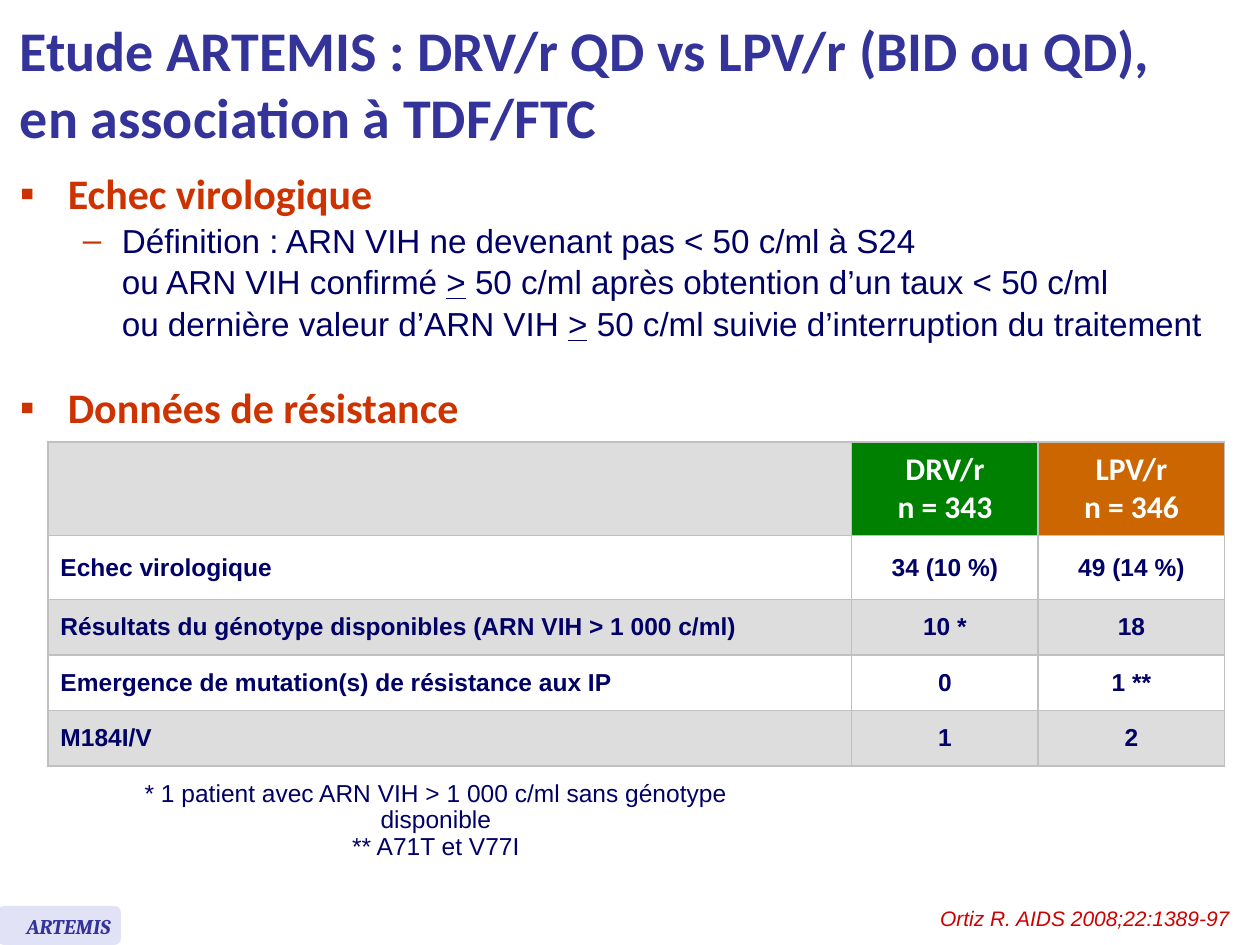
from lxml.etree import SubElement
from pptx import Presentation
from pptx.dml.color import RGBColor
from pptx.enum.shapes import MSO_SHAPE as Shape
from pptx.enum.text import MSO_ANCHOR as Anchor, PP_ALIGN as Align
from pptx.oxml.ns import qn
from pptx.util import Inches, Pt

INDIGO = RGBColor(0x33, 0x33, 0x99)
NAVY = RGBColor(0x00, 0x00, 0x66)
RUST = RGBColor(0xCC, 0x33, 0x00)
RED = RGBColor(0xCC, 0x00, 0x00)
GREEN = RGBColor(0x00, 0x80, 0x00)
ORANGE = RGBColor(0xCC, 0x66, 0x00)
WHITE = RGBColor(0xFF, 0xFF, 0xFF)
GREY = RGBColor(0xDD, 0xDD, 0xDD)
BORDER = RGBColor(0xC0, 0xC0, 0xC0)
LAVENDER = RGBColor(0xE2, 0xE2, 0xF6)

DEFINITION = [
    "Définition : ARN VIH ne devenant pas < 50 c/ml à S24",
    "ou ARN VIH confirmé > 50 c/ml après obtention d’un taux < 50 c/ml",
    "ou dernière valeur d’ARN VIH > 50 c/ml suivie d’interruption du traitement",
]
ROWS = [
    ["", "DRV/r\nn = 343", "LPV/r\nn = 346"],
    ["Echec virologique", "34 (10 %)", "49 (14 %)"],
    ["Résultats du génotype disponibles (ARN VIH > 1 000 c/ml)", "10 *", "18"],
    ["Emergence de mutation(s) de résistance aux IP", "0", "1 **"],
    ["M184I/V", "1", "2"],
]
COLUMN_WIDTHS = [6.38, 1.48, 1.48]
ROW_HEIGHTS = [0.74, 0.51, 0.44, 0.44, 0.44]
HEADER_FILLS = [GREY, GREEN, ORANGE]


def style(para, size, name, color, bold=False, italic=False):
    """Set the font of a whole paragraph."""
    font = para.font
    font.size, font.name = Pt(size), name
    font.bold, font.italic = bold, italic
    font.color.rgb = color


def add_box(slide, left, top, width, height, anchor=Anchor.TOP):
    """Add an empty wrapping text box and return its text frame."""
    box = slide.shapes.add_textbox(Inches(left), Inches(top), Inches(width), Inches(height))
    frame = box.text_frame
    frame.word_wrap = True
    frame.vertical_anchor = anchor
    return frame


def add_bullet(para, mark, margin, indent):
    """Give a paragraph a rust bullet with a hanging indent."""
    props = para._p.get_or_add_pPr()
    props.set("marL", str(Inches(margin)))
    props.set("indent", str(-Inches(indent)))
    color = SubElement(props, qn("a:buClr"))
    SubElement(color, qn("a:srgbClr"), val=str(RUST))
    SubElement(props, qn("a:buFont"), typeface="Arial")
    SubElement(props, qn("a:buChar"), char=mark)


def add_heading(para, text):
    """Write a first-level bullet."""
    para.text = text
    add_bullet(para, "▪", 0.38, 0.38)
    style(para, 24, "Calibri", RUST, bold=True)


def add_definition(para, lines):
    """Write a second-level bullet with its comparison signs underlined."""
    para.level = 1
    add_bullet(para, "–", 0.81, 0.31)
    style(para, 19, "Arial", NAVY)
    para.line_spacing = 1.05
    para.space_after = Pt(22)
    for number, line in enumerate(lines):
        if number:
            para.add_line_break()
        before, sign, after = line.partition(">")
        for text in filter(None, (before, sign, after)):
            span = para.add_run()
            span.text = text
            if text == ">":
                span.font.underline = True


def add_borders(cell):
    """Draw thin grey lines on the four sides of a cell."""
    props = cell._tc.get_or_add_tcPr()
    for position, side in enumerate(("lnL", "lnR", "lnT", "lnB")):
        line = props.makeelement(qn(f"a:{side}"), {"w": str(Pt(1))})
        fill = SubElement(line, qn("a:solidFill"))
        SubElement(fill, qn("a:srgbClr"), val=str(BORDER))
        props.insert(position, line)


def add_results(slide):
    """Add the table of resistance results."""
    frame = slide.shapes.add_table(
        len(ROWS), len(COLUMN_WIDTHS), Inches(0.38), Inches(3.51),
        Inches(sum(COLUMN_WIDTHS)), Inches(sum(ROW_HEIGHTS)))
    table = frame.table
    for column, width in zip(table.columns, COLUMN_WIDTHS):
        column.width = Inches(width)
    for r, (values, height) in enumerate(zip(ROWS, ROW_HEIGHTS)):
        table.rows[r].height = Inches(height)
        for c, value in enumerate(values):
            cell = table.cell(r, c)
            cell.vertical_anchor = Anchor.MIDDLE
            cell.fill.solid()
            banded = WHITE if r % 2 else GREY
            cell.fill.fore_color.rgb = banded if r else HEADER_FILLS[c]
            add_borders(cell)
            para = cell.text_frame.paragraphs[0]
            para.text = value
            para.alignment = Align.CENTER if c else Align.LEFT
            if r:
                style(para, 14, "Arial", NAVY, bold=True)
            else:
                style(para, 18, "Calibri", WHITE, bold=True)


def add_notes_below(slide):
    """Add the two remarks under the table."""
    frame = add_box(slide, 0.61, 6.15, 5.7, 0.52)
    frame.text = "* 1 patient avec ARN VIH > 1 000 c/ml sans génotype disponible\n** A71T et V77I"
    for para in frame.paragraphs:
        para.alignment = Align.CENTER
        para.line_spacing = 0.9
        style(para, 14, "Arial", NAVY)


def add_study_tag(slide):
    """Add the rounded study label in the bottom corner."""
    tag = slide.shapes.add_shape(
        Shape.ROUNDED_RECTANGLE, Inches(-0.02), Inches(7.19), Inches(0.98), Inches(0.31))
    tag.shadow.inherit = False
    tag.fill.solid()
    tag.fill.fore_color.rgb = LAVENDER
    tag.line.fill.background()
    para = add_box(slide, 0.08, 7.2, 0.93, 0.3).paragraphs[0]
    para.text = "ARTEMIS"
    para.alignment = Align.CENTER
    style(para, 12, "Cambria", INDIGO, bold=True, italic=True)


def main():
    """Build and save the slide."""
    deck = Presentation()
    deck.slide_width, deck.slide_height = Inches(10), Inches(7.5)
    page = deck.slides.add_slide(deck.slide_layouts[6])

    title = add_box(page, 0.06, 0.05, 9.94, 1.21, Anchor.MIDDLE).paragraphs[0]
    title.text = "Etude ARTEMIS : DRV/r QD vs LPV/r (BID ou QD),\ven association à TDF/FTC"
    style(title, 32, "Calibri", INDIGO, bold=True)

    body = add_box(page, 0.06, 1.28, 9.87, 1.61)
    add_heading(body.paragraphs[0], "Echec virologique")
    add_definition(body.add_paragraph(), DEFINITION)
    add_heading(body.add_paragraph(), "Données de résistance")

    add_results(page)
    add_notes_below(page)

    citation = add_box(page, 6.86, 7.14, 3, 0.3).paragraphs[0]
    citation.text = "Ortiz R. AIDS 2008;22:1389-97"
    citation.alignment = Align.RIGHT
    style(citation, 12, "Arial", RED, italic=True)

    add_study_tag(page)
    deck.save("out.pptx")


if __name__ == "__main__":
    main()
